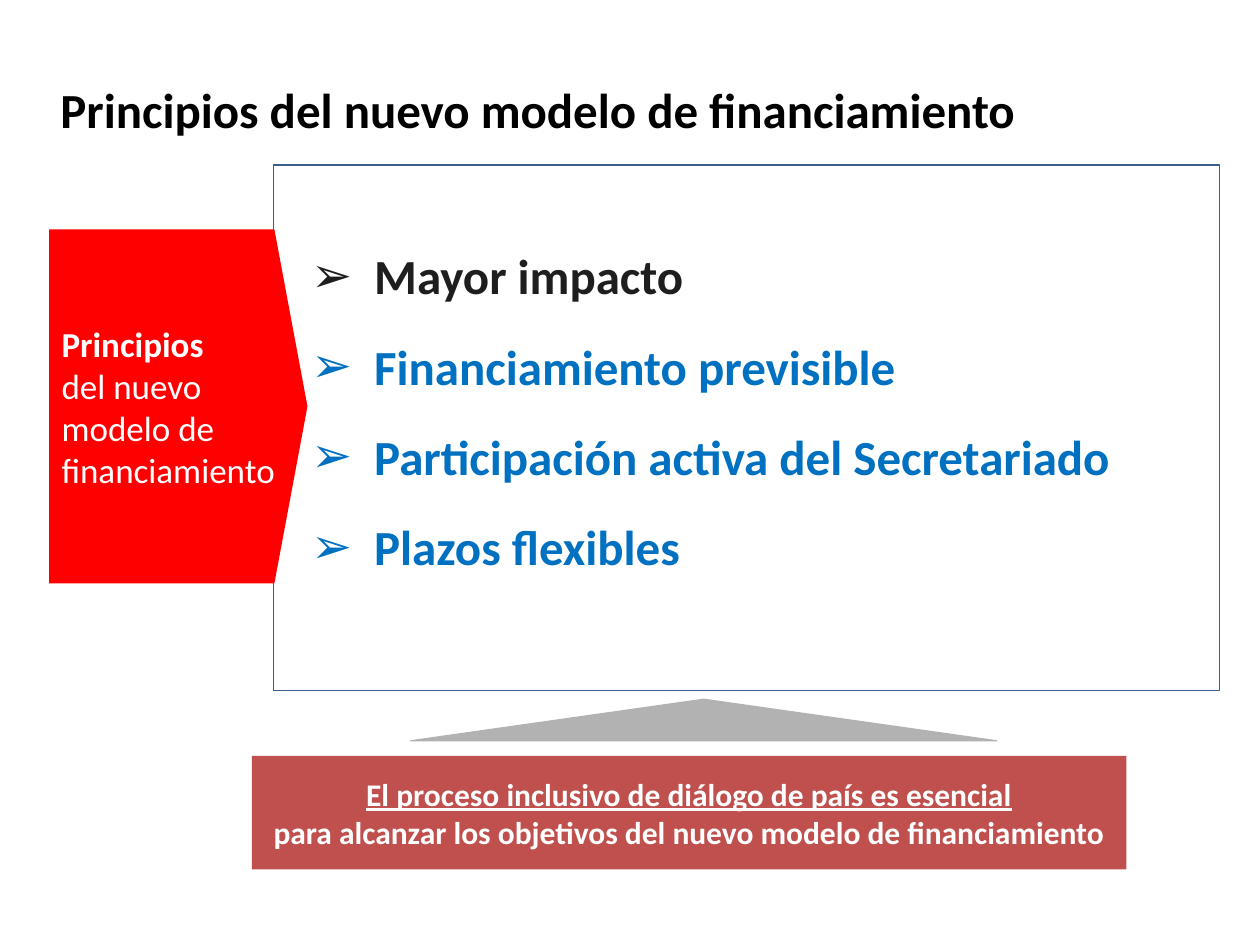
from lxml import etree
from pptx import Presentation
from pptx.dml.color import RGBColor
from pptx.enum.shapes import MSO_SHAPE
from pptx.enum.text import MSO_ANCHOR, MSO_AUTO_SIZE, PP_ALIGN
from pptx.oxml.ns import qn
from pptx.util import Inches, Pt

BLACK = RGBColor(0x00, 0x00, 0x00)
WHITE = RGBColor(0xFF, 0xFF, 0xFF)
CHARCOAL = RGBColor(0x1E, 0x1E, 0x1E)
BLUE = RGBColor(0x00, 0x70, 0xC0)
NAVY = RGBColor(0x3A, 0x5F, 0x8C)
RED = RGBColor(0xFF, 0x00, 0x00)
BRICK = RGBColor(0xC0, 0x50, 0x4D)
GRAY = RGBColor(0xB2, 0xB2, 0xB2)


def add_block(kind, left, top, width, height, fill=None, line=None, weight=1):
    """Add a shadowless shape; without a fill or line colour that part is empty."""
    block = page.shapes.add_shape(
        kind, Inches(left), Inches(top), Inches(width), Inches(height))
    block.shadow.inherit = False
    if fill is None:
        block.fill.background()
    else:
        block.fill.solid()
        block.fill.fore_color.rgb = fill
    if line is None:
        block.line.fill.background()
    else:
        block.line.color.rgb = line
        block.line.width = Pt(weight)
    block.text_frame.vertical_anchor = MSO_ANCHOR.MIDDLE
    return block


def write_lines(frame, lines, size, color, align):
    frame.text = "\n".join(lines)
    for para in frame.paragraphs:
        para.alignment = align
        para.font.name = "Calibri"
        para.font.size = Pt(size)
        para.font.bold = True
        para.font.color.rgb = color


deck = Presentation()
deck.slide_width, deck.slide_height = Inches(10), Inches(7.5)
page = deck.slides.add_slide(deck.slide_layouts[1])

# Title
title = page.shapes.title
title.left, title.top = Inches(0.38), Inches(0.21)
title.width, title.height = Inches(9.08), Inches(0.94)
title.text_frame.auto_size = MSO_AUTO_SIZE.NONE
title.text_frame.vertical_anchor = MSO_ANCHOR.BOTTOM
write_lines(title.text_frame, ["Principios del nuevo modelo de financiamiento"],
            28, BLACK, PP_ALIGN.LEFT)

# List of principles
principles = page.placeholders[1]
principles.left, principles.top = Inches(2.37), Inches(1.84)
principles.width, principles.height = Inches(7.2), Inches(2.84)
frame = principles.text_frame
frame.auto_size = MSO_AUTO_SIZE.NONE
frame.vertical_anchor = MSO_ANCHOR.MIDDLE
frame.margin_left = frame.margin_top = frame.margin_bottom = Inches(0.1)
frame.margin_right = 0
write_lines(frame, ["Mayor impacto", "Financiamiento previsible",
                    "Participación activa del Secretariado", "Plazos flexibles"],
            28, BLUE, PP_ALIGN.JUSTIFY)
frame.paragraphs[0].font.color.rgb = CHARCOAL
for para in frame.paragraphs:
    para.space_before, para.space_after = Pt(12), Pt(6)
    properties = para._p.get_or_add_pPr()
    properties.set("marL", str(Inches(0.5)))
    properties.set("indent", str(-Inches(0.5)))
    bullet = etree.Element(qn("a:buChar"), char="➢")
    properties.find(qn("a:defRPr")).addprevious(bullet)

# Frame around the list and the arrow label beside it
add_block(MSO_SHAPE.RECTANGLE, 2.17, 1.31, 7.51, 4.17, line=NAVY)
label = add_block(MSO_SHAPE.PENTAGON, 0.39, 1.82, 2.05, 2.81, fill=RED)
label.adjustments[0] = 0.128
write_lines(label.text_frame, ["Principios", "del nuevo modelo de financiamiento"],
            20, WHITE, PP_ALIGN.LEFT)
label.text_frame.paragraphs[1].font.bold = False

# Supporting message
add_block(MSO_SHAPE.ISOSCELES_TRIANGLE, 3.26, 5.55, 4.65, 0.33,
          fill=GRAY, line=GRAY, weight=0.75)
message = add_block(MSO_SHAPE.RECTANGLE, 2, 6, 6.94, 0.9, fill=BRICK)
write_lines(message.text_frame,
            ["El proceso inclusivo de diálogo de país es esencial",
             "para alcanzar los objetivos del nuevo modelo de financiamiento"],
            18, WHITE, PP_ALIGN.CENTER)
message.text_frame.paragraphs[0].font.underline = True

deck.save("out.pptx")
